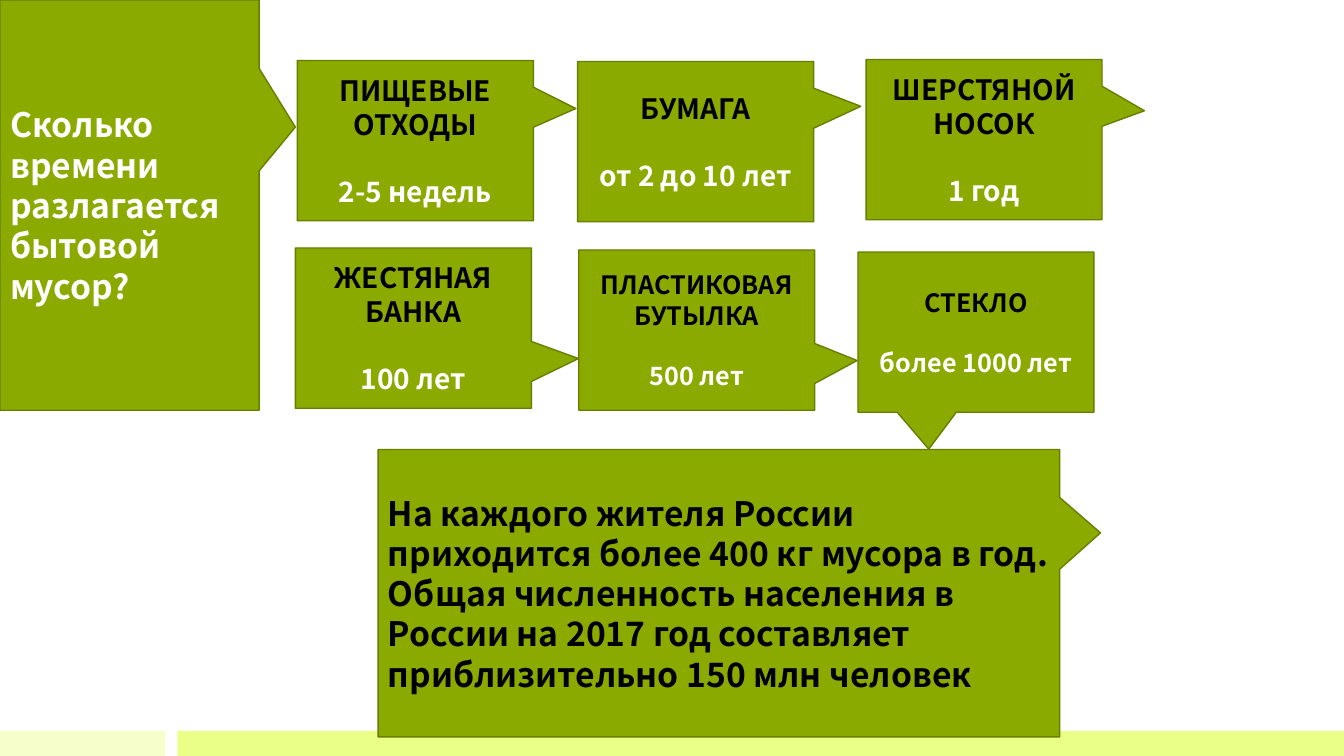
from pptx import Presentation
from pptx.dml.color import RGBColor
from pptx.enum.shapes import MSO_SHAPE
from pptx.enum.text import MSO_ANCHOR, MSO_AUTO_SIZE, PP_ALIGN
from pptx.util import Inches, Pt

RECTANGLE = MSO_SHAPE.RECTANGLE
CALLOUT = MSO_SHAPE.RECTANGULAR_CALLOUT
LEFT, CENTER = PP_ALIGN.LEFT, PP_ALIGN.CENTER
MIDDLE = MSO_ANCHOR.MIDDLE

FONT = "Noto Sans CJK JP"
LINE_HEIGHT = 1.2
CARD_SIZE = (2.34, 1.59)
COLORS = {
    "green": "8BAA00",
    "outline": "677E00",
    "pale": "F6FFCC",
    "lime": "E9FF88",
    "black": "000000",
    "white": "FFFFFF",
}
TITLE = "Сколько времени разлагается бытовой мусор?"
TITLE_AREA = (0, 0, 2.57, 4.07)
FACTS = [
    "На каждого жителя России приходится более 400 кг мусора в год.",
    "Общая численность населения в России на 2017 год составляет "
    "приблизительно 150 млн человек",
]
# Waste, decay time, left, top, pointer offset, text size
CARDS = [
    ("ПИЩЕВЫЕ ОТХОДЫ", "2-5 недель", 2.95, 0.6, (0.68, -0.2), 20),
    ("БУМАГА", "от 2 до 10 лет", 5.73, 0.61, (0.7, -0.22), 20),
    ("ШЕРСТЯНОЙ НОСОК", "1 год", 8.59, 0.59, (0.68, -0.18), 20),
    ("ЖЕСТЯНАЯ БАНКА", "100 лет", 2.93, 2.46, (0.7, 0.19), 20),
    ("ПЛАСТИКОВАЯ БУТЫЛКА", "500 лет", 5.74, 2.48, (0.68, 0.19), 18),
    ("СТЕКЛО", "более 1000 лет", 8.51, 2.5, (-0.2, 0.73), 18),
]


def color(name):
    return RGBColor.from_string(COLORS[name])


def add_block(page, kind, area, fill):
    block = page.shapes.add_shape(kind, *map(Inches, area))
    block.shadow.inherit = False
    block.fill.solid()
    block.fill.fore_color.rgb = color(fill)
    block.line.fill.background()
    return block


def add_callout(page, area, pointer):
    """Outlined box whose pointer tip is given as a share of its size."""
    callout = add_block(page, CALLOUT, area, "green")
    callout.line.color.rgb = color("outline")
    callout.line.width = Pt(1)
    callout.adjustments[0], callout.adjustments[1] = pointer
    return callout


def write(shape, lines, size, colors, align):
    frame = shape.text_frame
    frame.text = "\n".join(lines)
    frame.word_wrap = True
    frame.auto_size = MSO_AUTO_SIZE.NONE
    frame.vertical_anchor = MIDDLE
    for para, name in zip(frame.paragraphs, colors):
        para.alignment = align
        para.line_spacing = Pt(size * LINE_HEIGHT)
        para.space_before = Pt(0)
        for span in para.runs:
            span.font.name = FONT
            span.font.size = Pt(size)
            span.font.bold = True
            span.font.color.rgb = color(name)


def add_title(page):
    add_callout(page, TITLE_AREA, (0.64, -0.19))
    title = page.shapes.title
    title.left, title.top, title.width, title.height = map(Inches, TITLE_AREA)
    write(title, [TITLE], 24, ["white"], LEFT)
    # Bring the title text in front of its callout
    page.shapes._spTree.append(title._element)


def add_card(page, waste, time, left, top, pointer, size):
    card = add_callout(page, (left, top, *CARD_SIZE), pointer)
    write(card, [waste, time], size, ["black", "white"], CENTER)
    card.text_frame.paragraphs[1].space_before = Pt(size * LINE_HEIGHT)


def main():
    deck = Presentation()
    deck.slide_width, deck.slide_height = Inches(13.33), Inches(7.5)
    page = deck.slides.add_slide(deck.slide_layouts.get_by_name("Title Only"))

    add_block(page, RECTANGLE, (0, 7.25, 1.64, 0.25), "pale")
    add_block(page, RECTANGLE, (1.76, 7.25, 11.57, 0.25), "lime")
    add_title(page)
    facts = add_callout(page, (3.75, 4.46, 6.76, 2.85), (0.56, -0.21))
    write(facts, FACTS, 24, ["black"] * len(FACTS), LEFT)
    for card in CARDS:
        add_card(page, *card)

    deck.save("out.pptx")


if __name__ == "__main__":
    main()
